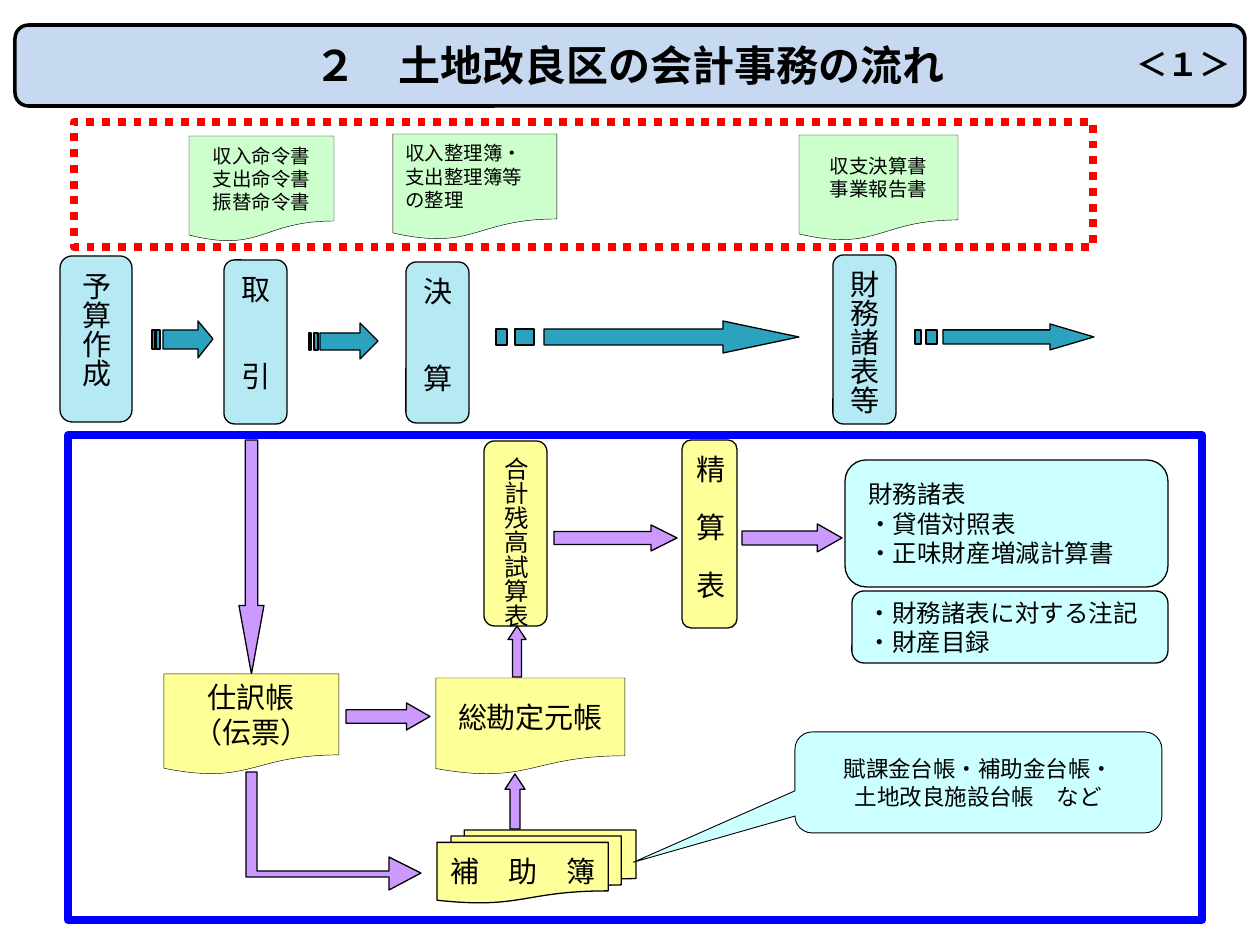
"""Build the slide on the accounting workflow of a land improvement district."""
from pptx import Presentation
from pptx.dml.color import RGBColor
from pptx.enum.dml import MSO_LINE
from pptx.enum.shapes import MSO_SHAPE
from pptx.enum.text import MSO_ANCHOR, PP_ALIGN
from pptx.util import Pt

ROUND, RECT = MSO_SHAPE.ROUNDED_RECTANGLE, MSO_SHAPE.RECTANGLE
DOC, STACK = MSO_SHAPE.FLOWCHART_DOCUMENT, MSO_SHAPE.FLOWCHART_MULTIDOCUMENT
CALLOUT = MSO_SHAPE.ROUNDED_RECTANGULAR_CALLOUT
UP, DOWN, RIGHT = MSO_SHAPE.UP_ARROW, MSO_SHAPE.DOWN_ARROW, MSO_SHAPE.RIGHT_ARROW
LEFT, CENTER = PP_ALIGN.LEFT, PP_ALIGN.CENTER
TOP, MIDDLE = MSO_ANCHOR.TOP, MSO_ANCHOR.MIDDLE
DOTTED = MSO_LINE.ROUND_DOT

EMU = 914400 / 126
FONT = "Noto Sans CJK JP"
BLACK, BANNER, TEAL, PURPLE = "000000", "C6D9F1", "2DA2BF", "CC99FF"
SKY, YELLOW, GREEN, AQUA = "B5E9F4", "FFFF99", "CCFFCC", "CCFFFF"
RED, BLUE = "FF0000", "0000FF"

PILLARS = [
    ("予算作成", (60, 256, 72, 166), SKY, 16.6),
    ("取　　引", (224, 260, 63, 164), SKY, 16.6),
    ("決　　算", (406, 262, 63, 161), SKY, 16.6),
    ("財務諸表等", (833, 255, 63, 169), SKY, 16.6),
    ("合計残高試算表", (484, 441, 63, 185), YELLOW, 14),
    ("精　算　表", (682, 440, 55, 188), YELLOW, 16.6),
]
DOCUMENTS = [
    ("仕訳帳\n（伝票）", (164, 674, 175, 101), YELLOW, 16.6, CENTER),
    ("総勘定元帳", (436, 678, 189, 97), YELLOW, 16.6, CENTER),
    ("収入命令書\n支出命令書\n振替命令書", (189, 136, 145, 106), GREEN, 11.1, CENTER),
    ("収入整理簿・\n支出整理簿等\nの整理", (393, 134, 164, 106), GREEN, 11.1, LEFT),
    ("収支決算書\n事業報告書", (799, 135, 159, 106), GREEN, 11.1, CENTER),
]
# Each striped arrow: stripe spans, then shaft start, head start and tip, then y levels
STRIPED = [
    ([(152, 155), (156, 160)], (163, 198, 213), (321, 330, 349, 358)),
    ([(309, 311), (314, 318)], (320, 360, 378), (323, 333, 350, 359)),
    ([(496, 507), (515, 534)], (544, 723, 799), (321, 329, 345, 353)),
    ([(915, 921), (926, 937)], (943, 1050, 1094), (324, 330, 344, 350)),
]
ARROWS = [
    (DOWN, (239, 440, 25, 234), 2.74),
    (RIGHT, (346, 703, 84, 27), 0.87),
    (UP, (505, 774, 20, 55), 0.76),
    (RIGHT, (554, 525, 123, 26), 1),
    (RIGHT, (742, 524, 100, 28), 0.88),
    (UP, (508, 626, 18, 51), 0.76),
]
ELBOW = [(421, 873), (389, 857), (389, 871), (257, 871), (257, 772),
         (246, 772), (246, 877), (389, 877), (389, 890)]
FRAMES = [((74, 122, 1019, 125), RED, 4.5, DOTTED), ((68, 435, 1134, 485), BLUE, 4.33, None)]

prs = Presentation()
prs.slide_width, prs.slide_height = round(1260 * EMU), round(945 * EMU)
shapes = prs.slides.add_slide(prs.slide_layouts[6]).shapes


def emu(box):
    return [round(v * EMU) for v in box]


def rgb(color):
    return RGBColor.from_string(color)


def paint(sp, fill, line=BLACK, width=0.75, dash=None):
    sp.shadow.inherit = False
    if fill:
        sp.fill.solid()
        sp.fill.fore_color.rgb = rgb(fill)
    else:
        sp.fill.background()
    if line:
        sp.line.color.rgb = rgb(line)
        sp.line.width = Pt(width)
        if dash:
            sp.line.dash_style = dash
    else:
        sp.line.fill.background()
    return sp


def add(kind, box, fill, adj=(), **line):
    sp = paint(shapes.add_shape(kind, *emu(box)), fill, **line)
    for i, value in enumerate(adj):
        sp.adjustments[i] = value
    return sp


def write(sp, text, size=14, align=CENTER, anchor=MIDDLE, bold=False, wrap=True,
          vertical=False, font=FONT):
    tf = sp.text_frame
    tf.word_wrap = wrap
    tf.vertical_anchor = anchor
    if vertical:
        tf._txBody.bodyPr.set("vert", "eaVert")
    for i, line in enumerate(text.split("\n")):
        p = tf.add_paragraph() if i else tf.paragraphs[0]
        p.alignment = align
        r = p.add_run()
        r.text = line
        r.font.size, r.font.bold, r.font.name = Pt(size), bold, font
        r.font.color.rgb = rgb(BLACK)
        ea = r._r.rPr.makeelement(
            "{http://schemas.openxmlformats.org/drawingml/2006/main}ea", {"typeface": FONT})
        r._r.rPr.append(ea)


def outline(contours, fill):
    first, *rest = contours
    builder = shapes.build_freeform(*first[0], scale=EMU)
    builder.add_line_segments(first[1:])
    for contour in rest:
        builder.move_to(*contour[0])
        builder.add_line_segments(contour[1:])
    paint(builder.convert_to_shape(), fill)


def striped_arrow(stripes, xs, ys):
    start, head, tip = xs
    top, upper, lower, bottom = ys
    body = [(head, top), (head, upper), (start, upper), (start, lower), (head, lower),
            (head, bottom), (tip, (top + bottom) // 2)]
    bars = [[(a, upper), (a, lower), (b, lower), (b, upper)] for a, b in stripes]
    outline([body] + bars, TEAL)


add(ROUND, (15, 25, 1230, 81), BANNER, width=2)
write(add(RECT, (26, 33, 1208, 63), BANNER, line=None),
      "２　土地改良区の会計事務の流れ", size=24, anchor=TOP, bold=True)
write(shapes.add_textbox(*emu((1124, 39, 121, 50))), "＜１＞", size=18, align=LEFT,
      anchor=TOP, bold=True, wrap=False, font="Calibri")

for text, box, fill, size in PILLARS:
    write(add(ROUND, box, fill), text, size=size, wrap=False, vertical=True)
write(add(STACK, (437, 830, 199, 73), YELLOW), "補　助　簿", size=16.6, wrap=False)

for arrow in STRIPED:
    striped_arrow(*arrow)
for kind, box, head in ARROWS:
    add(kind, box, PURPLE, adj=(0.5, head))
outline([ELBOW], PURPLE)

for text, box, fill, size, align in DOCUMENTS:
    write(add(DOC, box, fill, width=0.25), text, size=size, align=align)
write(add(CALLOUT, (795, 732, 367, 101), AQUA, adj=(-0.94, 0.79, 0.17), width=0.5),
      "賦課金台帳・補助金台帳・\n土地改良施設台帳　など", size=12.9)

for box, color, width, dash in FRAMES:
    add(RECT, box, None, line=color, width=width, dash=dash)

write(add(ROUND, (852, 591, 316, 72), AQUA), "・財務諸表に対する注記\n・財産目録", align=LEFT)
add(ROUND, (845, 460, 323, 127), AQUA)
write(shapes.add_textbox(*emu((856, 473, 321, 102))),
      "財務諸表\n・貸借対照表\n・正味財産増減計算書", align=LEFT, anchor=TOP)

prs.save("out.pptx")
